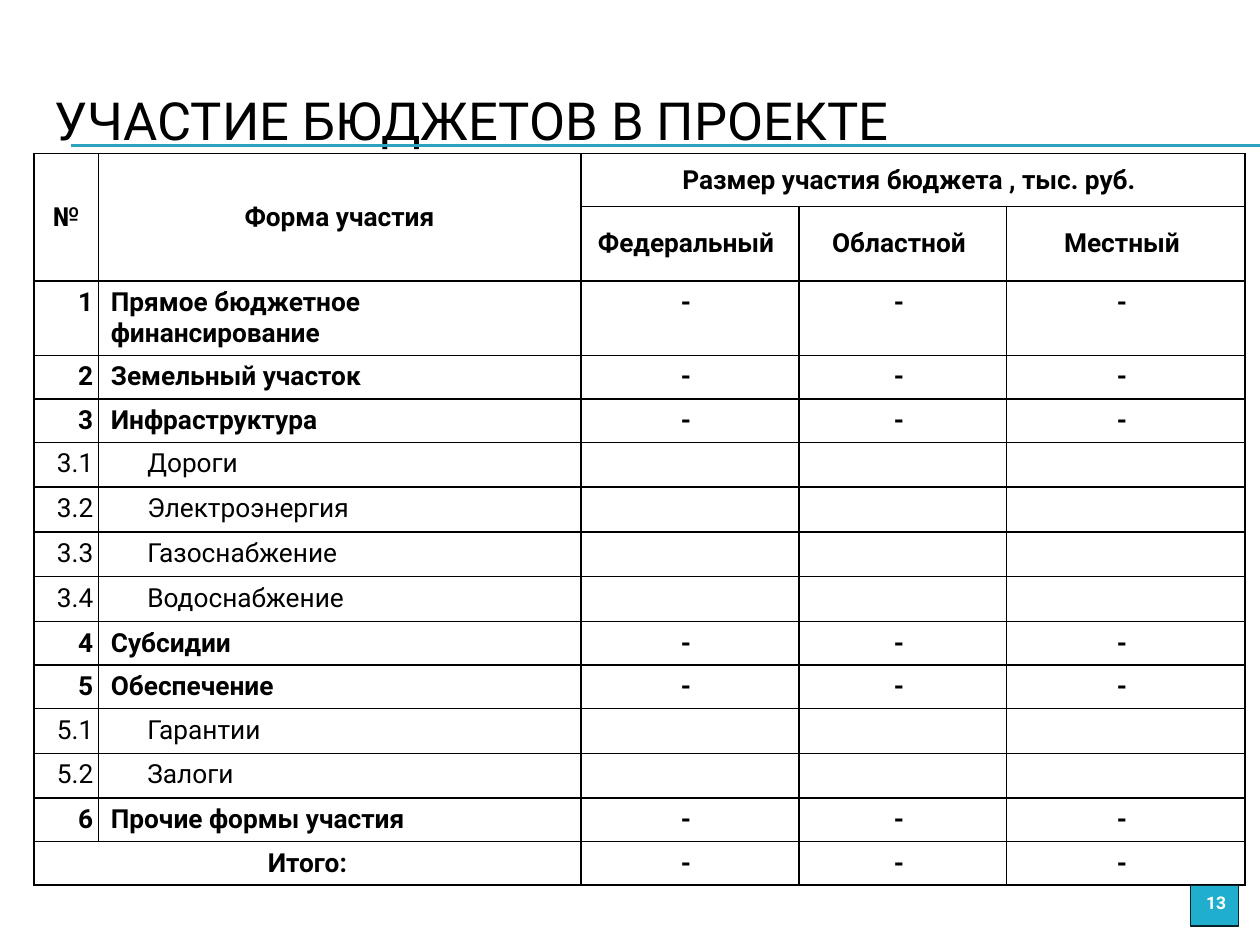
from dataclasses import dataclass

from lxml.etree import SubElement
from pptx import Presentation
from pptx.dml.color import RGBColor
from pptx.enum.shapes import MSO_CONNECTOR, MSO_SHAPE
from pptx.enum.text import MSO_ANCHOR, PP_ALIGN
from pptx.oxml.ns import qn
from pptx.util import Inches, Pt


@dataclass(frozen=True)
class Theme:
    font: str = "Roboto"
    text: str = "000000"
    paper: str = "FFFFFF"
    rule: str = "2DA2BF"
    badge: str = "1FAECD"
    badge_line: str = "062329"
    title_size: int = 30
    table_size: int = 15
    number_size: int = 10
    border: float = 1
    thin: float = 0.75


@dataclass(frozen=True)
class Item:
    number: str
    name: str

    @property
    def is_sub(self) -> bool:
        return "." in self.number


THEME = Theme()
WIDTH, HEIGHT = 10, 7.5
COLUMNS = (0.51, 3.83, 1.73, 1.65, 1.89)
HEADER_ROWS = (0.42, 0.59)
ROW, TALL_ROW = 0.34, 0.59
NUMBER_SIDES, NAME_SIDES, SUB_SIDES, BUDGET_SIDES = (
    (0.04, 0.04), (0.1, 0.1), (0.39, 0.1), (0.1, 0.16))
BUDGETS = ("Федеральный", "Областной", "Местный")
ITEMS = (
    Item("1", "Прямое бюджетное финансирование"),
    Item("2", "Земельный участок"),
    Item("3", "Инфраструктура"),
    Item("3.1", "Дороги"),
    Item("3.2", "Электроэнергия"),
    Item("3.3", "Газоснабжение"),
    Item("3.4", "Водоснабжение"),
    Item("4", "Субсидии"),
    Item("5", "Обеспечение"),
    Item("5.1", "Гарантии"),
    Item("5.2", "Залоги"),
    Item("6", "Прочие формы участия"),
)


def rgb(color: str) -> RGBColor:
    return RGBColor.from_string(color)


def add_text(p, text: str, size: float, color: str, bold: bool, align) -> None:
    p.alignment = align
    r = p.add_run()
    r.text = text
    r.font.name = THEME.font
    r.font.size = Pt(size)
    r.font.bold = bold
    r.font.color.rgb = rgb(color)


def style_cell(cell) -> None:
    """Plain fill, black borders and a row height that suits the table's type size."""
    tc_pr = cell._tc.get_or_add_tcPr()
    for side in ("a:lnL", "a:lnR", "a:lnT", "a:lnB"):
        ln = SubElement(tc_pr, qn(side), w=str(Pt(THEME.border)))
        SubElement(SubElement(ln, qn("a:solidFill")), qn("a:srgbClr"), val=THEME.text)
    cell.fill.solid()
    cell.fill.fore_color.rgb = rgb(THEME.paper)
    SubElement(cell.text_frame.paragraphs[0]._p, qn("a:endParaRPr"),
               sz=str(THEME.table_size * 100))


def fill_cell(cell, text: str, sides: tuple[float, float], align=PP_ALIGN.CENTER,
              bold: bool = True, anchor=MSO_ANCHOR.TOP) -> None:
    cell.margin_left, cell.margin_right = map(Inches, sides)
    cell.vertical_anchor = anchor
    add_text(cell.text_frame.paragraphs[0], text, THEME.table_size, THEME.text, bold, align)


def add_rule(s, y: float) -> None:
    line = s.shapes.add_connector(MSO_CONNECTOR.STRAIGHT, Inches(0.56), Inches(y),
                                  Inches(WIDTH), Inches(y))
    line.line.color.rgb = rgb(THEME.rule)
    line.line.width = Pt(THEME.thin)
    SubElement(line._element.spPr, qn("a:effectLst"))


def add_title(s, text: str) -> None:
    title = s.shapes.title
    title.left, title.top, title.width, title.height = map(Inches, (0.33, 0.49, 9.5, 0.92))
    title.text_frame.vertical_anchor = MSO_ANCHOR.MIDDLE
    add_text(title.text_frame.paragraphs[0], text, THEME.title_size, THEME.text,
             False, PP_ALIGN.LEFT)


def add_budget_table(s) -> None:
    heights = (*HEADER_ROWS, TALL_ROW, *[ROW] * len(ITEMS))
    table = s.shapes.add_table(len(heights), len(COLUMNS), Inches(0.27), Inches(1.22),
                               Inches(sum(COLUMNS)), Inches(sum(heights))).table
    table.first_row = table.horz_banding = False
    for column, width in zip(table.columns, COLUMNS):
        column.width = Inches(width)
    for row, height in zip(table.rows, heights):
        row.height = Inches(height)
    for cell in table.iter_cells():
        style_cell(cell)

    total = len(heights) - 1
    for first, last in (((0, 0), (1, 0)), ((0, 1), (1, 1)),
                        ((0, 2), (0, 4)), ((total, 0), (total, 1))):
        table.cell(*first).merge(table.cell(*last))

    middle = MSO_ANCHOR.MIDDLE
    fill_cell(table.cell(0, 0), "№", NUMBER_SIDES, anchor=middle)
    fill_cell(table.cell(0, 1), "Форма участия", NAME_SIDES, anchor=middle)
    fill_cell(table.cell(0, 2), "Размер участия бюджета , тыс. руб.", BUDGET_SIDES,
              anchor=middle)
    for col, budget in enumerate(BUDGETS, 2):
        fill_cell(table.cell(1, col), budget, BUDGET_SIDES, anchor=middle)

    for row, item in enumerate(ITEMS, len(HEADER_ROWS)):
        bold = not item.is_sub
        fill_cell(table.cell(row, 0), item.number, NUMBER_SIDES, PP_ALIGN.RIGHT, bold)
        fill_cell(table.cell(row, 1), item.name, SUB_SIDES if item.is_sub else NAME_SIDES,
                  PP_ALIGN.LEFT, bold)
        if not item.is_sub:
            fill_dashes(table, row)
    fill_cell(table.cell(total, 0), "Итого:", NUMBER_SIDES)
    fill_dashes(table, total)


def fill_dashes(table, row: int) -> None:
    for col in range(2, len(COLUMNS)):
        fill_cell(table.cell(row, col), "-", BUDGET_SIDES)


def add_page_number(s, number: str) -> None:
    sp = s.shapes.add_shape(MSO_SHAPE.RECTANGLE, *map(Inches, (9.45, 7.03, 0.38, 0.32)))
    sp.shadow.inherit = False
    sp.fill.solid()
    sp.fill.fore_color.rgb = rgb(THEME.badge)
    sp.line.color.rgb = rgb(THEME.badge_line)
    sp.line.width = Pt(THEME.thin)
    tf = sp.text_frame
    tf.vertical_anchor = MSO_ANCHOR.TOP
    add_text(tf.paragraphs[0], number, THEME.number_size, THEME.paper, True, PP_ALIGN.RIGHT)


def main() -> None:
    prs = Presentation()
    prs.slide_width, prs.slide_height = Inches(WIDTH), Inches(HEIGHT)
    s = prs.slides.add_slide(prs.slide_layouts[5])
    for y in (1.15, 1.16):
        add_rule(s, y)
    add_title(s, "УЧАСТИЕ БЮДЖЕТОВ В ПРОЕКТЕ")
    add_budget_table(s)
    add_page_number(s, "13")
    prs.save("out.pptx")


if __name__ == "__main__":
    main()
